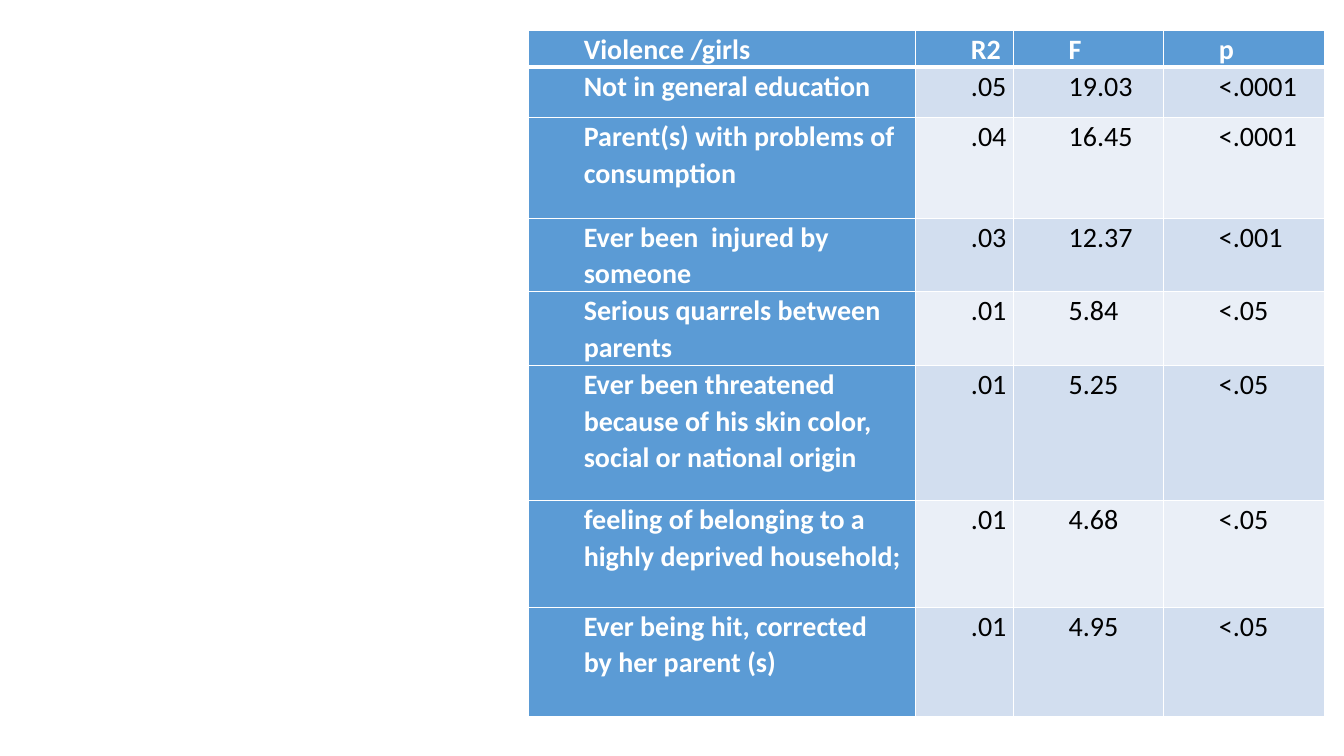
import pptx
import pptx.util
import pptx.dml.color
import pptx.enum.text
import pptx.oxml.ns
import lxml.etree

inch = pptx.util.Inches
point = pptx.util.Pt
align = pptx.enum.text.PP_ALIGN


def tint(code):
    return pptx.dml.color.RGBColor.from_string(code)


def edge(cell, side, width):
    tag = pptx.oxml.ns.qn
    line = lxml.etree.SubElement(cell._tc.get_or_add_tcPr(), tag(f"a:ln{side}"), w=str(point(width)))
    fill = lxml.etree.SubElement(line, tag("a:solidFill"))
    lxml.etree.SubElement(fill, tag("a:srgbClr"), val="FFFFFF")


deck = pptx.Presentation()
deck.slide_width, deck.slide_height = inch(13.33), inch(7.5)
slide = deck.slides.add_slide(deck.slide_layouts[6])

rows = [
    (0.36, "Violence /girls", "R2", "F", "p"),
    (0.5, "Not in general education", ".05", "19.03", "<.0001"),
    (1, "Parent(s) with problems of consumption", ".04", "16.45", "<.0001"),
    (0.73, "Ever been  injured by someone", ".03", "12.37", "<.001"),
    (0.73, "Serious quarrels between parents", ".01", "5.84", "<.05"),
    (1.34, "Ever been threatened because of his skin color, social or national origin", ".01", "5.25", "<.05"),
    (1.06, "feeling of belonging to a highly deprived household;", ".01", "4.68", "<.05"),
    (1.09, "Ever being hit, corrected\nby her parent (s)", ".01", "4.95", "<.05"),
]
wide = [3.84, 0.97, 1.49, 1.6]
high = [row[0] for row in rows]
frame = slide.shapes.add_table(
    len(rows), len(wide), inch(5.24), inch(0.3), inch(sum(wide)), inch(sum(high)))
table = frame.table
for col, size in zip(table.columns, wide):
    col.width = inch(size)

inset = {"margin_left": inch(0.05), "margin_right": inch(0.05), "margin_top": 0, "margin_bottom": 0}
type_set = {"name": "Calibri", "size": point(20)}

for r, (size, *texts) in enumerate(rows):
    table.rows[r].height = inch(size)
    for c, text in enumerate(texts):
        cell = table.cell(r, c)
        head = r == 0 or c == 0
        for key, value in inset.items():
            setattr(cell, key, value)
        for side in "LRTB":
            thick = (r, side) in ((0, "B"), (1, "T"))
            edge(cell, side, 3 if thick else 1)
        cell.fill.solid()
        cell.fill.fore_color.rgb = tint("5B9BD5" if head else "D2DEEF" if r % 2 else "EAEFF7")
        cell.text = text
        for para in cell.text_frame.paragraphs:
            para.line_spacing = 1.07
            para.alignment = align.LEFT if c == 0 and r else align.JUSTIFY
            para._p.get_or_add_pPr().set("marL", str(inch(0.5)))
            font = para.runs[0].font
            for key, value in type_set.items():
                setattr(font, key, value)
            font.bold = head
            font.color.rgb = tint("FFFFFF" if head else "000000")

deck.save("out.pptx")
